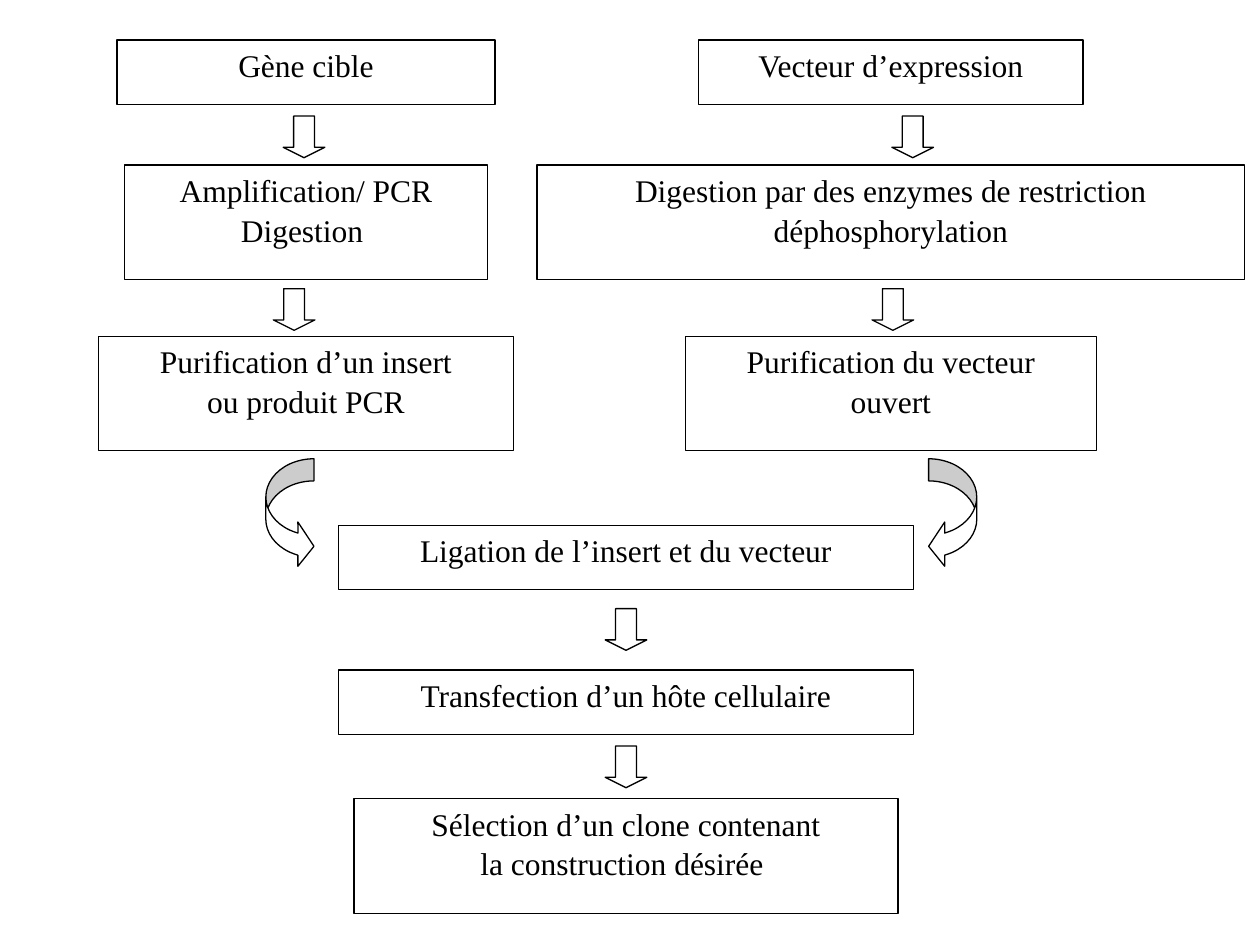
from dataclasses import dataclass

from pptx import Presentation
from pptx.dml.color import RGBColor
from pptx.enum.shapes import MSO_SHAPE as Shape
from pptx.enum.text import MSO_ANCHOR as Anchor, PP_ALIGN as Align
from pptx.util import Cm, Pt


@dataclass(frozen=True)
class Theme:
    ink: RGBColor = RGBColor(0, 0, 0)
    paper: RGBColor = RGBColor(255, 255, 255)
    font: str = "Times New Roman"
    text_size: float = 18
    line_gap: float = 1
    line_width: float = 0.75


LEFT, MIDDLE, RIGHT = 6.17, 12.62, 17.96
BOX_HEIGHTS = {1: 1.3, 2: 2.31}
ARROW_SIZE = 0.84
TURN_TOP, TURN_WIDTH, TURN_HEIGHT = 9.25, 0.97, 2.21

# centre, top, width, lines of text
STEPS = [
    (LEFT, 0.81, 7.62, ["Gène cible"]),
    (RIGHT, 0.81, 7.75, ["Vecteur d’expression"]),
    (LEFT, 3.33, 7.32, ["Amplification/ PCR", "Digestion "]),
    (RIGHT, 3.33, 14.27, ["Digestion par des enzymes de restriction", "déphosphorylation"]),
    (LEFT, 6.78, 8.38, ["Purification d’un insert", "ou produit PCR"]),
    (RIGHT, 6.78, 8.28, ["Purification du vecteur", "ouvert"]),
    (MIDDLE, 10.59, 11.58, ["Ligation de l’insert et du vecteur"]),
    (MIDDLE, 13.51, 11.58, ["Transfection d’un hôte cellulaire"]),
    (MIDDLE, 16.1, 10.97, ["Sélection d’un clone contenant", "la construction désirée "]),
]

# centre, top
DOWN_ARROWS = [
    (6.13, 2.34), (18.4, 2.34),
    (5.93, 5.82), (18, 5.82),
    (MIDDLE, 12.27), (MIDDLE, 15.04),
]


class FlowSlide:
    """Holds the theme and the slide being drawn; lengths are in centimetres."""

    def __init__(self, slide, theme):
        self.slide = slide
        self.theme = theme

    def outlined(self, preset, left, top, width, height):
        shape = self.slide.shapes.add_shape(
            preset, Cm(left), Cm(top), Cm(width), Cm(height))
        shape.shadow.inherit = False
        shape.fill.solid()
        shape.fill.fore_color.rgb = self.theme.paper
        shape.line.color.rgb = self.theme.ink
        shape.line.width = Pt(self.theme.line_width)
        return shape

    def step(self, center, top, width, lines):
        shape = self.outlined(
            Shape.RECTANGLE, center - width / 2, top, width, BOX_HEIGHTS[len(lines)])
        shape.fill.background()
        frame = shape.text_frame
        frame.word_wrap = False
        frame.vertical_anchor = Anchor.TOP
        for index, line in enumerate(lines):
            paragraph = frame.add_paragraph() if index else frame.paragraphs[0]
            paragraph.text = line
            paragraph.alignment = Align.CENTER
            paragraph.space_before = Pt(self.theme.line_gap if index else 0)
            paragraph.font.name = self.theme.font
            paragraph.font.size = Pt(self.theme.text_size)
            paragraph.font.color.rgb = self.theme.ink

    def down_arrow(self, center, top):
        self.outlined(
            Shape.DOWN_ARROW, center - ARROW_SIZE / 2, top, ARROW_SIZE, ARROW_SIZE)\
            .adjustments[1] = 0.25

    def turn_arrow(self, left, mirrored=False):
        """Curved arrow into the ligation step; mirrored, it points left."""
        shape = self.outlined(
            Shape.CURVED_RIGHT_ARROW, left, TURN_TOP, TURN_WIDTH, TURN_HEIGHT)
        for index, value in enumerate((0.459, 0.919, 0.333)):
            shape.adjustments[index] = value
        if mirrored:
            shape.rotation = 180
            shape._element.spPr.get_or_add_xfrm().set("flipV", "1")


def main():
    presentation = Presentation()
    presentation.slide_width, presentation.slide_height = Cm(25.4), Cm(19.05)
    blank_layout = presentation.slide_layouts[6]
    flow = FlowSlide(presentation.slides.add_slide(blank_layout), Theme())
    for step in STEPS:
        flow.step(*step)
    for arrow in DOWN_ARROWS:
        flow.down_arrow(*arrow)
    flow.turn_arrow(5.36)
    flow.turn_arrow(18.72, mirrored=True)
    presentation.save("out.pptx")


if __name__ == "__main__":
    main()
